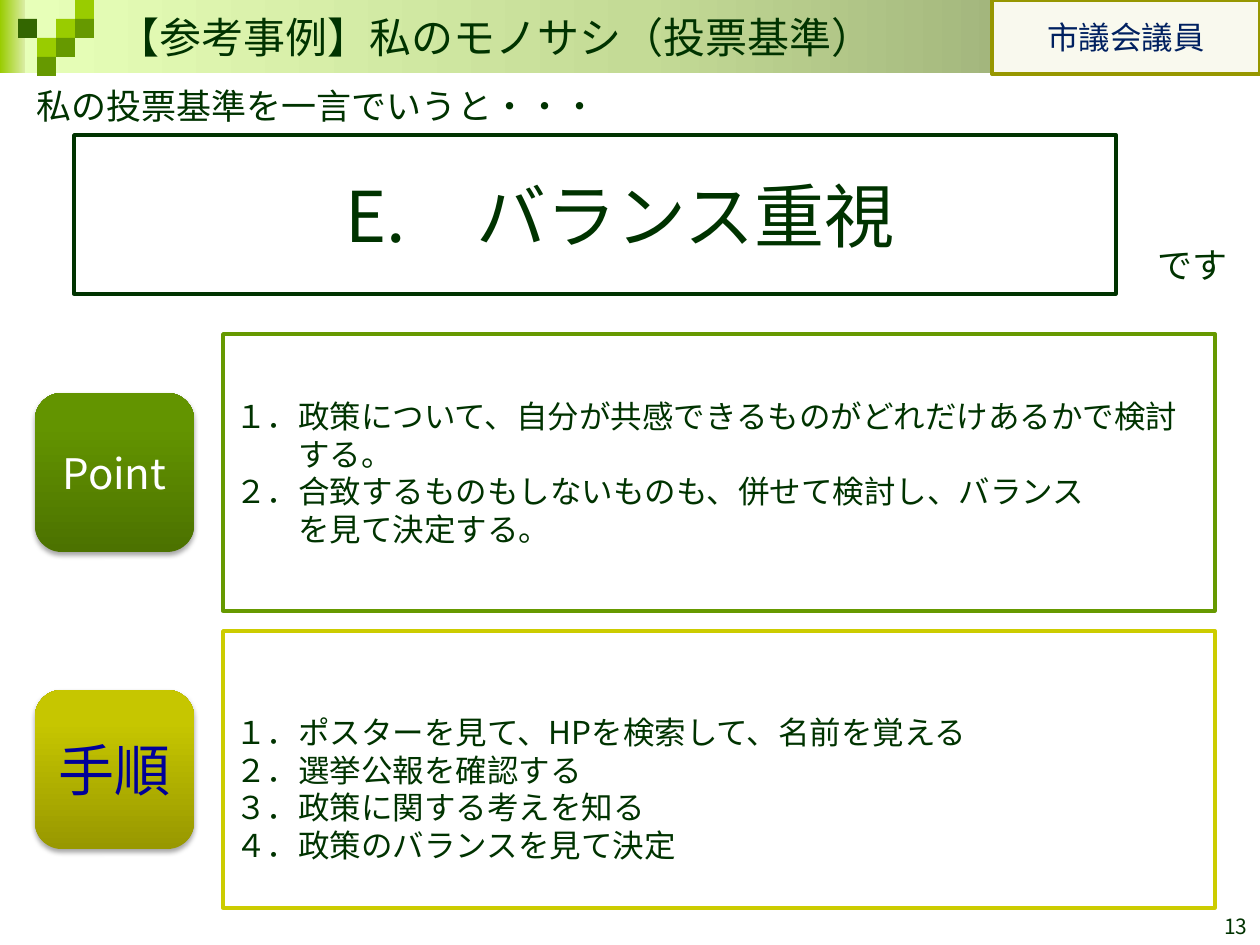
import pptx
import pptx.util
import pptx.dml.color
import pptx.enum.shapes
import pptx.enum.text
import pptx.oxml
import pptx.oxml.ns
import lxml.etree

FONT = "Noto Sans CJK JP"
DARK = "003300"
SHAPE = pptx.enum.shapes.MSO_SHAPE
ALIGN = pptx.enum.text.PP_ALIGN
ANCHOR = pptx.enum.text.MSO_ANCHOR
qn = pptx.oxml.ns.qn


def px(n):
    """Turn whole pixels, 126 to the inch, into EMU."""
    return pptx.util.Emu(round(n * 914400 / 126))


def color(fmt, value):
    """Give a solid fill or a font the colour of a hex string."""
    if hasattr(fmt, "solid"):
        fmt.solid()
        fmt.fore_color.rgb = pptx.dml.color.RGBColor.from_string(value)
    else:
        fmt.color.rgb = pptx.dml.color.RGBColor.from_string(value)


def gradient(s, stops, angle):
    """Fill a shape with (position, colour) stops at a clockwise angle."""
    s.fill.gradient()
    s.fill.gradient_angle = (360 - angle) % 360
    gs_list = s._element.spPr.find(".//" + qn("a:gsLst"))
    for gs in list(gs_list):
        gs_list.remove(gs)
    for pos, value in stops:
        gs = lxml.etree.SubElement(gs_list, qn("a:gs"), pos=str(pos * 1000))
        lxml.etree.SubElement(gs, qn("a:srgbClr"), val=value)


def drop_shadow(s):
    """Put a soft shadow below a shape."""
    effects = s._element.spPr.find(qn("a:effectLst"))
    shadow = lxml.etree.SubElement(effects, qn("a:outerShdw"), blurRad="39370", dist="22860",
                                   dir="5400000", rotWithShape="0")
    black = lxml.etree.SubElement(shadow, qn("a:srgbClr"), val="000000")
    lxml.etree.SubElement(black, qn("a:alpha"), val="35000")


def add_box(slide, x, y, w, h, fill=None, line=None, kind=SHAPE.RECTANGLE):
    """Add a preset shape with an optional solid fill and outline."""
    s = slide.shapes.add_shape(kind, px(x), px(y), px(w), px(h))
    s.shadow.inherit = False
    if fill:
        color(s.fill, fill)
    if line:
        color(s.line.fill, line)
        s.line.width = pptx.util.Pt(2)
    else:
        s.line.fill.background()
    return s


def set_text(s, lines, size, value=DARK, align=ALIGN.LEFT, first=0, font=FONT):
    """Write (text, left indent) lines into a shape, centred vertically."""
    tf = s.text_frame
    tf.word_wrap = True
    tf.vertical_anchor = ANCHOR.MIDDLE
    for i, (text, left) in enumerate(lines):
        p = tf.paragraphs[0] if i == 0 else tf.add_paragraph()
        p.text = text
        p.alignment = align
        pPr = p._p.get_or_add_pPr()
        pPr.set("marL", str(px(left)))
        pPr.set("indent", str(px(first)))
        r = p.runs[0]
        r.font.size = pptx.util.Pt(size)
        r.font.name = font
        color(r.font, value)
        lxml.etree.SubElement(r._r.get_or_add_rPr(), qn("a:ea"), typeface=FONT)


def add_text(slide, x, y, w, h, text, size, **style):
    """Add a text box holding one line."""
    s = slide.shapes.add_textbox(px(x), px(y), px(w), px(h))
    set_text(s, [(text, 0)], size, **style)
    return s


def add_header(slide, x, y, w, h):
    """Draw the title band with its mosaic, title and role tag."""
    gradient(add_box(slide, x, y, 39, h), [(0, "99CC00"), (100, "FFFFFF")], 0)
    gradient(add_box(slide, x + 25, y, w - 25, h),
             [(0, "8A9A6A"), (50, "C4DB96"), (100, "E7FFB8")], 180)
    tile = 19
    mosaic = [(2, 1, "99CC00"), (3, 0, "99CC00"), (3, 1, "669900"), (1, 2, "99CC00"),
              (0, 1, "336600"), (2, 2, "669900"), (1, 3, "669900")]
    for col, row, value in mosaic:
        add_box(slide, x + 18 + col * tile, y + row * tile, tile, tile, value)
    tag = add_box(slide, x + w - 268, y, 268, h + 1, "F9F9EE", "979700")
    set_text(tag, [("市議会議員", 0)], 18, "002060", ALIGN.CENTER)
    add_text(slide, x + 105, y + 5, 880, 63, "【参考事例】私のモノサシ（投票基準）", 24, font="Arial")


def add_statement(slide, x, y, w, h):
    """Draw the lead-in, the framed criterion and its closing word."""
    add_text(slide, x, y, 917, 59, "私の投票基準を一言でいうと・・・", 20, first=24)
    frame = add_box(slide, x + 74, y + 59, 1042, h - 59, "FFFFFF", DARK)
    set_text(frame, [("E.　バランス重視", 0)], 40, align=ALIGN.CENTER, first=50)
    add_text(slide, x + w - 139, y + h - 59, 124, 59, "です", 20, first=24)


def add_panel(slide, x, y, w, h, label, label_size, label_color, stops, line, lines, top=6):
    """Draw a rounded label beside a framed list."""
    side = 159
    badge = add_box(slide, x, y + (h - side) // 2, side, side, kind=SHAPE.ROUNDED_RECTANGLE)
    gradient(badge, stops, 270)
    drop_shadow(badge)
    set_text(badge, [(label, 0)], label_size, label_color, ALIGN.CENTER)
    frame = add_box(slide, x + 188, y, w - 188, h, "FFFFFF", line)
    set_text(frame, lines, 18)
    frame.text_frame.margin_top = px(top)


def main():
    """Build and save the slide."""
    prs = pptx.Presentation()
    prs.slide_width, prs.slide_height = px(1260), px(945)
    slide = prs.slides.add_slide(prs.slide_layouts[6])
    add_header(slide, 0, 0, 1260, 73)
    add_statement(slide, 0, 76, 1260, 218)
    add_panel(slide, 35, 334, 1180, 277, "Point", 24, "FFFFFF",
              [(0, "4C7200"), (80, "639400"), (100, "639500")], "669900",
              [("１．政策について、自分が共感できるものがどれだけあるかで検討", 0),
               ("する。", 63),
               ("２．合致するものもしないものも、併せて検討し、バランス", 0),
               ("を見て決定する。", 63)])
    add_panel(slide, 35, 631, 1180, 277, "手順", 32, "000099",
              [(0, "989800"), (80, "C6C600"), (100, "C7C700")], "CCCC00",
              [("１．ポスターを見て、HPを検索して、名前を覚える", 0),
               ("２．選挙公報を確認する", 0),
               ("３．政策に関する考えを知る", 0),
               ("４．政策のバランスを見て決定", 0)], top=44)
    number = add_text(slide, 966, 882, 294, 63, "13", 12, align=ALIGN.RIGHT)
    number.text_frame.vertical_anchor = ANCHOR.BOTTOM
    prs.save("out.pptx")


if __name__ == "__main__":
    main()
